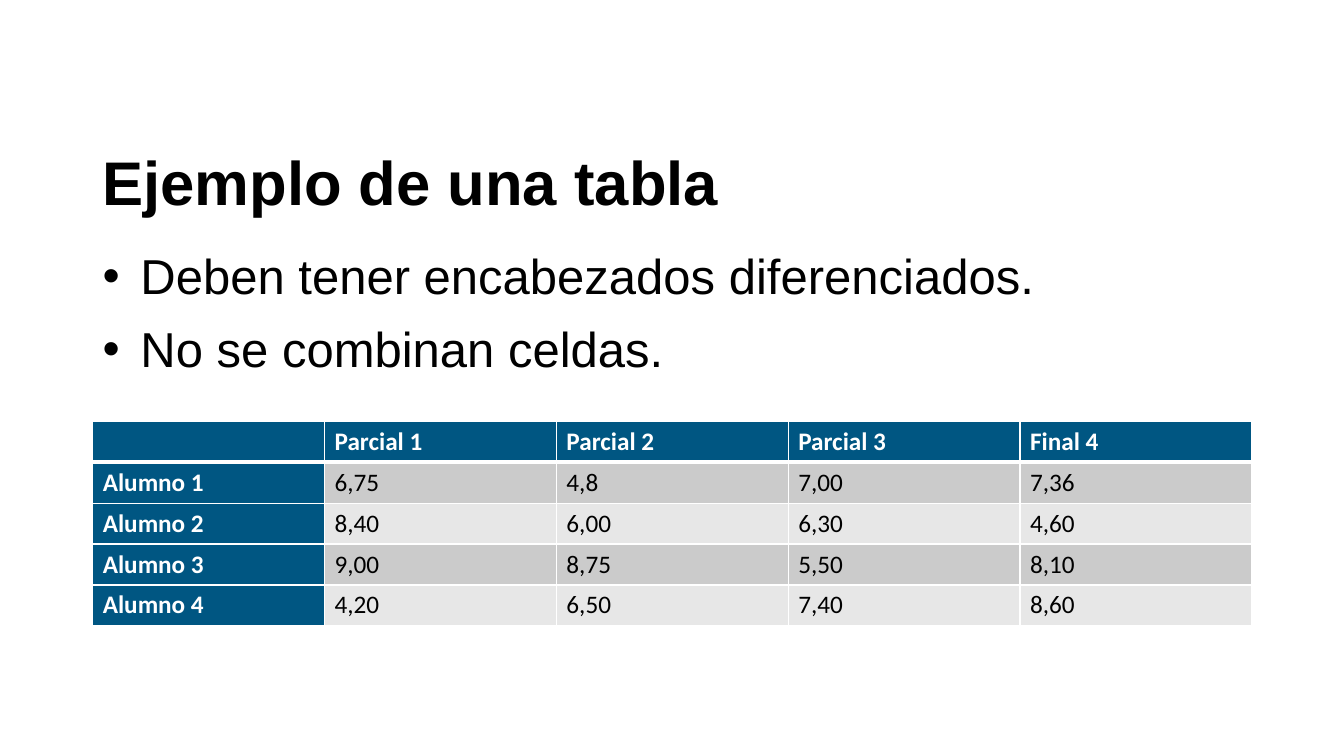
import pptx
import pptx.dml.color
import pptx.enum.text
import pptx.oxml
import pptx.oxml.ns
import pptx.util

Pt = pptx.util.Pt

HEADING = "Ejemplo de una tabla"
RULES = ["Deben tener encabezados diferenciados.", "No se combinan celdas."]
GRADES = [
    ["", "Parcial 1", "Parcial 2", "Parcial 3", "Final 4"],
    ["Alumno 1", "6,75", "4,8", "7,00", "7,36"],
    ["Alumno 2", "8,40", "6,00", "6,30", "4,60"],
    ["Alumno 3", "9,00", "8,75", "5,50", "8,10"],
    ["Alumno 4", "4,20", "6,50", "7,40", "8,60"],
]
HEADER_FILL, BAND_FILLS = "005682", ["E7E7E7", "CBCBCB"]
BLACK, WHITE = "000000", "FFFFFF"
LEFT = 66.25
COLUMN_WIDTH, ROW_HEIGHT = 165.6, 29.2
LINE_SPACING = 1.07
BULLET_INDENT = 27


def color(value):
    return pptx.dml.color.RGBColor.from_string(value)


def add_run(paragraph, text, font, size, text_color, bold=False):
    run = paragraph.add_run()
    run.text = text
    run.font.name = font
    run.font.size = Pt(size)
    run.font.bold = bold
    run.font.color.rgb = color(text_color)


def add_xml(parent, xml):
    namespace = pptx.oxml.ns.nsdecls("a")
    parent.append(pptx.oxml.parse_xml(xml.replace(" ", f" {namespace} ", 1)))


def add_text_frame(slide, top, width, height):
    frame = slide.shapes.add_textbox(Pt(LEFT), Pt(top), Pt(width), Pt(height)).text_frame
    frame.word_wrap = True
    return frame


def add_heading(slide):
    frame = add_text_frame(slide, 84.5, 864, 85)
    frame.vertical_anchor = pptx.enum.text.MSO_ANCHOR.MIDDLE
    paragraph = frame.paragraphs[0]
    paragraph.line_spacing = LINE_SPACING
    add_run(paragraph, HEADING, "Arial", 44, BLACK, True)


def add_rules(slide):
    frame = add_text_frame(slide, 169.25, 846, 122.5)
    for index, rule in enumerate(RULES):
        paragraph = frame.add_paragraph() if index else frame.paragraphs[0]
        paragraph.line_spacing = LINE_SPACING
        if index:
            paragraph.space_before = Pt(7)
        properties = paragraph._p.get_or_add_pPr()
        properties.set("marL", str(Pt(BULLET_INDENT)))
        properties.set("indent", str(-Pt(BULLET_INDENT)))
        add_xml(properties, f'<a:buClr ><a:srgbClr val="{BLACK}"/></a:buClr>')
        add_xml(properties, '<a:buFont typeface="Arial"/>')
        add_xml(properties, '<a:buChar char="•"/>')
        add_run(paragraph, rule, "Arial", 35, BLACK)


def set_borders(cell, row):
    widths = {"L": 1, "R": 1, "T": 3 if row == 1 else 1, "B": 3 if row == 0 else 1}
    properties = cell._tc.get_or_add_tcPr()
    for side, width in widths.items():
        add_xml(properties, f'<a:ln{side} w="{Pt(width)}"><a:solidFill>'
                            f'<a:srgbClr val="{WHITE}"/></a:solidFill></a:ln{side}>')


def add_grades(slide):
    rows, columns = len(GRADES), len(GRADES[0])
    grades = slide.shapes.add_table(
        rows, columns, Pt(LEFT), Pt(301),
        Pt(columns * COLUMN_WIDTH), Pt(rows * ROW_HEIGHT)).table
    grades.first_col = True
    for column in grades.columns:
        column.width = Pt(COLUMN_WIDTH)
    for row, values in enumerate(GRADES):
        grades.rows[row].height = Pt(ROW_HEIGHT)
        for column, value in enumerate(values):
            is_header = row == 0 or column == 0
            cell = grades.cell(row, column)
            set_borders(cell, row)
            cell.fill.solid()
            cell.fill.fore_color.rgb = color(HEADER_FILL if is_header else BAND_FILLS[row % 2])
            if value:
                add_run(cell.text_frame.paragraphs[0], value, "Calibri", 18,
                        WHITE if is_header else BLACK, is_header)


def main():
    presentation = pptx.Presentation()
    presentation.slide_width, presentation.slide_height = Pt(960), Pt(540)
    slide = presentation.slides.add_slide(presentation.slide_layouts[6])
    add_grades(slide)
    add_heading(slide)
    add_rules(slide)
    presentation.save("out.pptx")


if __name__ == "__main__":
    main()
